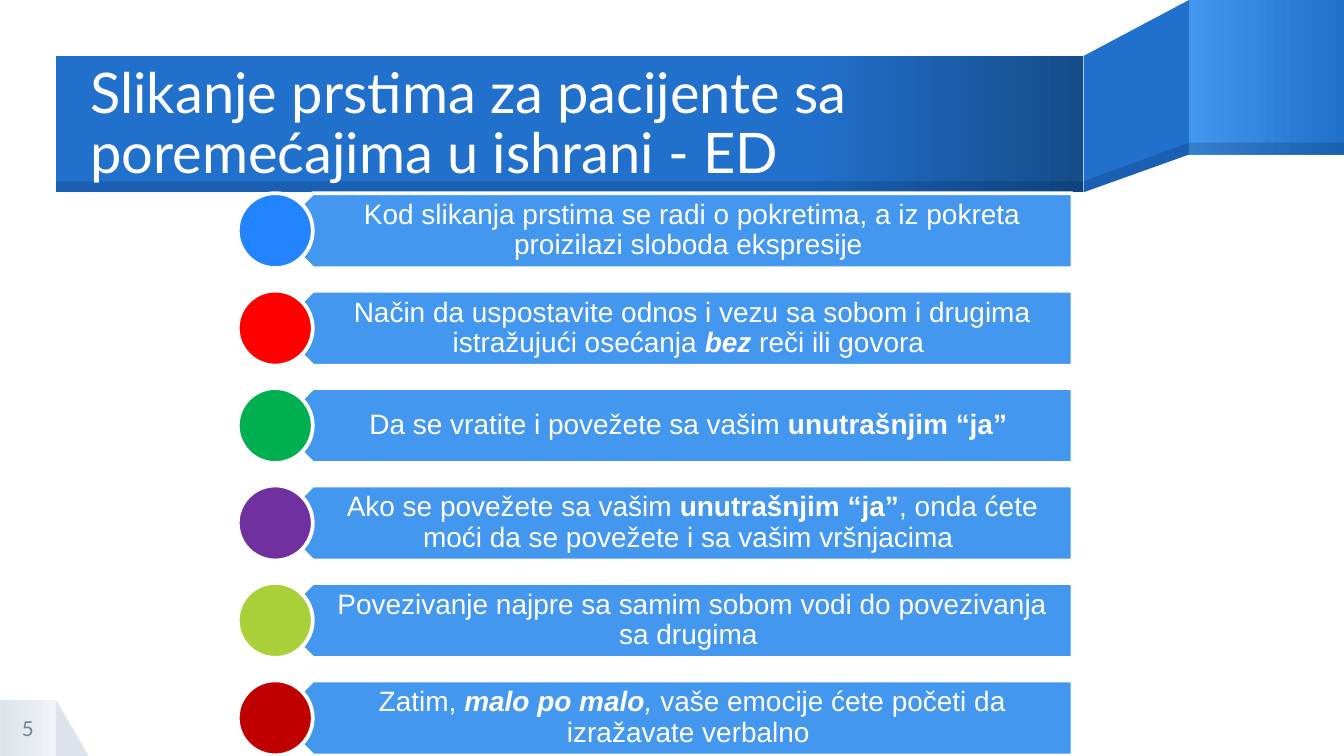
from dataclasses import dataclass

import pptx
import pptx.dml.color
import pptx.enum.shapes
import pptx.enum.text
import pptx.oxml
import pptx.oxml.ns
import pptx.util

Pt = pptx.util.Pt
RGB = pptx.dml.color.RGBColor
Kind = pptx.enum.shapes.MSO_SHAPE
Align = pptx.enum.text.PP_ALIGN
Middle = pptx.enum.text.MSO_ANCHOR.MIDDLE

WHITE = RGB(0xFF, 0xFF, 0xFF)
BLUE = RGB(0x21, 0x70, 0xCC)
SKY = RGB(0x43, 0x97, 0xEE)
DEEP = RGB(0x15, 0x4C, 0x8A)
NAVY = RGB(0x00, 0x1F, 0x46)
MIST = RGB(0xDD, 0xE3, 0xEB)
PALE = RGB(0xF0, 0xF3, 0xF7)
SLATE = RGB(0x74, 0x83, 0x94)
AZURE = RGB(0x23, 0x84, 0xFF)
RED = RGB(0xFF, 0x00, 0x00)
GREEN = RGB(0x00, 0xB0, 0x50)
PURPLE = RGB(0x70, 0x30, 0xA0)
LIME = RGB(0xA9, 0xD0, 0x39)
MAROON = RGB(0xC0, 0x00, 0x00)


@dataclass
class Box:
    left: float
    top: float
    width: float
    height: float

    def lengths(self) -> list:
        return [Pt(v) for v in (self.left, self.top, self.width, self.height)]


@dataclass
class Run:
    text: str
    bold: bool = False
    italic: bool = False


@dataclass
class Row:
    color: RGB
    runs: list[Run]


@dataclass
class Style:
    font: dict
    align: Align
    spacing: float = 1.0
    inset: tuple = (0, 0, 0, 0)


TITLE = Style({"name": "Lato", "size": Pt(30)}, Align.LEFT, 0.9)
BODY = Style({"name": "Arial", "size": Pt(15)}, Align.CENTER, 0.9, (18, 4.2, 8.4, 4.2))
NUMBER = Style({"name": "Lato", "size": Pt(11)}, Align.CENTER)

ROWS = [
    Row(AZURE, [Run("Kod slikanja prstima se radi o pokretima, a iz pokreta "
                    "proizilazi sloboda ekspresije ")]),
    Row(RED, [Run("Način da uspostavite odnos i vezu sa sobom i drugima "
                  "istražujući osećanja "),
              Run("bez ", True, True), Run("reči ili govora ")]),
    Row(GREEN, [Run("Da se vratite i povežete sa vašim "),
                Run("unutrašnjim “ja” ", True)]),
    Row(PURPLE, [Run("Ako se povežete sa vašim "), Run("unutrašnjim “ja”", True),
                 Run(", onda ćete moći da se povežete i sa vašim vršnjacima ")]),
    Row(LIME, [Run("Povezivanje najpre sa samim sobom vodi do povezivanja "
                   "sa drugima ")]),
    Row(MAROON, [Run("Zatim, "), Run("malo po malo", True, True),
                 Run(", ", italic=True),
                 Run("vaše emocije ćete početi da izražavate verbalno ")]),
]
ROW_TOP, ROW_STEP, ROW_SIZE = 103.5, 52.2, 40.2

# Edges of the folded ribbon
LEFT, FOLD, TAIL, RIGHT = 30, 580.5, 637, 720
TOP, BASE, TAIL_BASE = 30, 103, 82.8
SHADE, TAIL_SHADE = 97.2, 76.4


def paint(shape, color: RGB, alpha: int = 100) -> None:
    shape.shadow.inherit = False
    shape.line.fill.background()
    shape.fill.solid()
    shape.fill.fore_color.rgb = color
    if alpha < 100:
        tint = shape.fill._xPr.find(".//" + pptx.oxml.ns.qn("a:srgbClr"))
        tint.append(pptx.oxml.parse_xml(
            f'<a:alpha {pptx.oxml.ns.nsdecls("a")} val="{alpha * 1000}"/>'))


def blend(shape, first: RGB, last: RGB, start: float = 0) -> None:
    """Fill from left to right, changing colour from the start share on."""
    shape.fill.gradient()
    shape.fill.gradient_angle = 0
    stops = shape.fill.gradient_stops
    for stop, color, place in zip(stops, (first, last), (start, 1)):
        stop.color.rgb = color
        stop.position = place


def draw(slide, kind: Kind, box: Box, color: RGB, alpha: int = 100):
    shape = slide.shapes.add_shape(kind, *box.lengths())
    paint(shape, color, alpha)
    return shape


def outline(slide, points: list[tuple], color: RGB, alpha: int = 100) -> None:
    first, *rest = [(Pt(x), Pt(y)) for x, y in points]
    builder = slide.shapes.build_freeform(*first)
    builder.add_line_segments(rest, close=True)
    paint(builder.convert_to_shape(), color, alpha)


def write(slide, box: Box, runs: list[Run], style: Style, color: RGB) -> None:
    frame = slide.shapes.add_textbox(*box.lengths()).text_frame
    sides = ("margin_left", "margin_top", "margin_right", "margin_bottom")
    look = dict(zip(sides, map(Pt, style.inset)))
    for key, value in (look | {"word_wrap": True, "vertical_anchor": Middle}).items():
        setattr(frame, key, value)
    para = frame.paragraphs[0]
    para.alignment = style.align
    para.line_spacing = style.spacing
    for item in runs:
        run = para.add_run()
        run.text = item.text
        run.font.color.rgb = color
        face = style.font | {"bold": item.bold, "italic": item.italic}
        for key, value in face.items():
            setattr(run.font, key, value)


def ribbon(slide) -> None:
    outline(slide, [(TAIL, 0), (FOLD, TOP), (FOLD, BASE), (TAIL, TAIL_BASE)], BLUE)
    tail = draw(slide, Kind.RECTANGLE, Box(TAIL, 0, RIGHT - TAIL, TAIL_BASE), SKY)
    blend(tail, SKY, BLUE)
    band = draw(slide, Kind.RECTANGLE, Box(LEFT, TOP, FOLD - LEFT, BASE - TOP), BLUE)
    blend(band, BLUE, DEEP, 0.73)
    outline(slide, [(TAIL, TAIL_SHADE), (FOLD, SHADE), (FOLD, BASE),
                    (TAIL, TAIL_BASE)], NAVY, 20)
    for left, right, top, base in ((TAIL, RIGHT, TAIL_SHADE, TAIL_BASE),
                                   (LEFT, FOLD, SHADE, BASE)):
        draw(slide, Kind.RECTANGLE, Box(left, top, right - left, base - top), NAVY, 20)


def edge(shape) -> None:
    shape.line.color.rgb = WHITE
    shape.line.width = Pt(2)


def entry(slide, row: Row, top: float) -> None:
    plate = draw(slide, Kind.PENTAGON, Box(147.5, top, 427, ROW_SIZE), SKY)
    plate.rotation = 180
    edge(plate)
    write(slide, Box(157.6, top, 416.9, ROW_SIZE), row.runs, BODY, WHITE)
    edge(draw(slide, Kind.OVAL, Box(127.4, top, ROW_SIZE, ROW_SIZE), row.color))


def main() -> None:
    deck = pptx.Presentation()
    deck.slide_width, deck.slide_height = Pt(720), Pt(405)
    slide = deck.slides.add_slide(deck.slide_layouts[6])
    corner = Box(0, 375, 30, 30)
    draw(slide, Kind.RIGHT_TRIANGLE, Box(30, 375, 17.5, 30), MIST)
    blend(draw(slide, Kind.RECTANGLE, corner, MIST), MIST, PALE)
    ribbon(slide)
    title = "Slikanje prstima za pacijente sa poremećajima u ishrani - ED"
    write(slide, Box(48.5, 31, 532, 72.5), [Run(title)], TITLE, WHITE)
    for index, row in enumerate(ROWS):
        entry(slide, row, ROW_TOP + index * ROW_STEP)
    write(slide, corner, [Run("5")], NUMBER, SLATE)
    deck.save("out.pptx")


if __name__ == "__main__":
    main()
